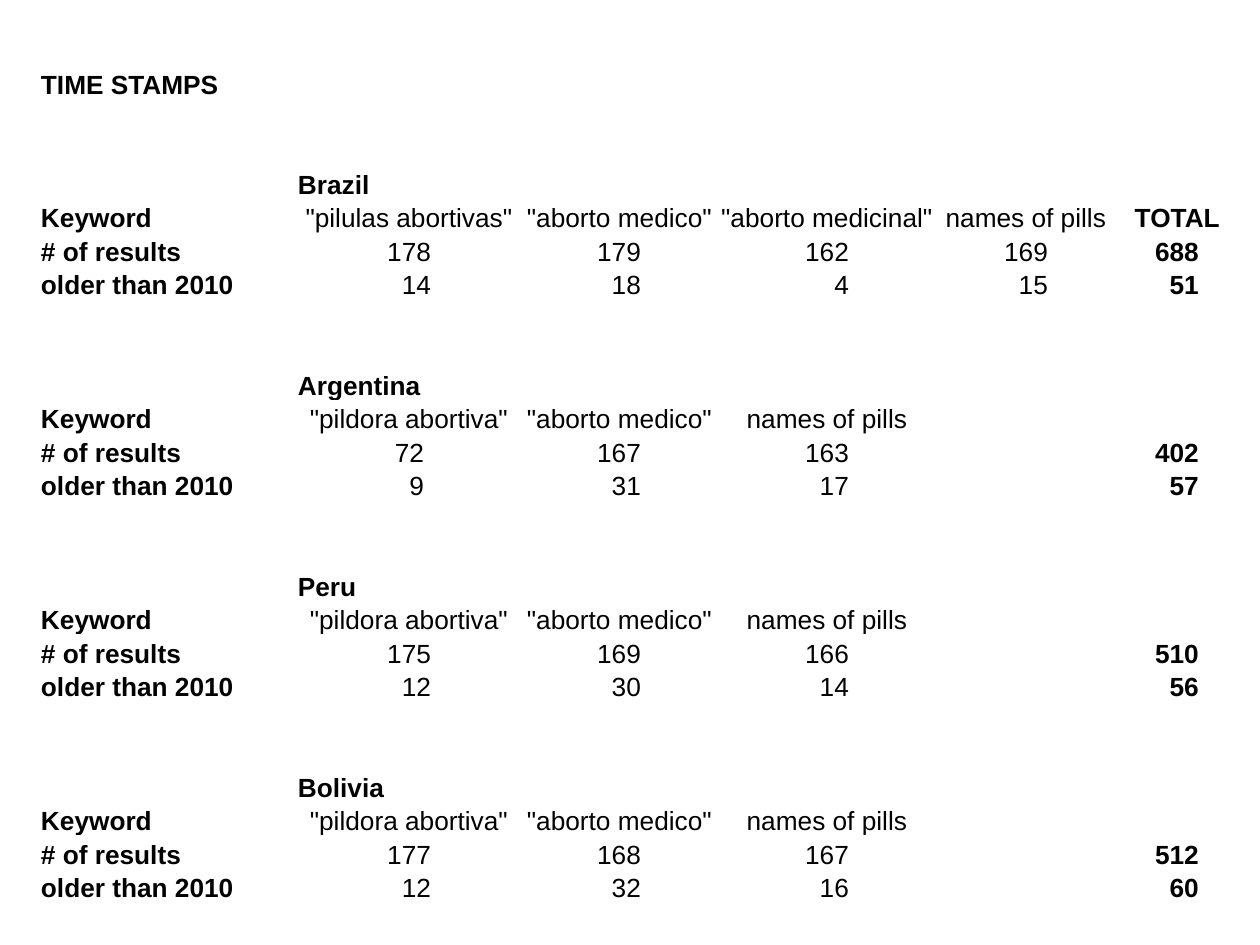
from pptx import Presentation
from pptx.dml.color import RGBColor
from pptx.enum.text import MSO_ANCHOR, PP_ALIGN
from pptx.util import Emu, Pt

PX = 914400 // 126
COLORS = {"text": "000000"}
COLUMN_WIDTHS = [257, 226, 195, 220, 178, 125]
ROW_COUNT = 25
FIRST_BLOCK_ROW = 3
BLOCK_STEP = 6
CELL_INSET = 2
DIGIT_WIDTH = 14.6
LABELS = ["Keyword", "# of results", "older than 2010"]

# Country, then keyword, results and older results for each column
COUNTRIES = [
    ("Brazil",
     ['"pilulas abortivas"', '"aborto medico"', '"aborto medicinal"', "names of pills", "TOTAL"],
     ["178", "179", "162", "169", "688"],
     ["14", "18", "4", "15", "51"]),
    ("Argentina",
     ['"pildora abortiva"', '"aborto medico"', "names of pills", "", ""],
     ["72", "167", "163", "", "402"],
     ["9", "31", "17", "", "57"]),
    ("Peru",
     ['"pildora abortiva"', '"aborto medico"', "names of pills", "", ""],
     ["175", "169", "166", "", "510"],
     ["12", "30", "14", "", "56"]),
    ("Bolivia",
     ['"pildora abortiva"', '"aborto medico"', "names of pills", "", ""],
     ["177", "168", "167", "", "512"],
     ["12", "32", "16", "", "60"]),
]


def px(length):
    return Emu(length * PX)


def format_cell(cell):
    """Give a cell, filled or empty, the plain look of the whole table."""
    cell.fill.background()
    cell.vertical_anchor = MSO_ANCHOR.BOTTOM
    cell.margin_left = cell.margin_right = cell.margin_top = px(CELL_INSET)
    cell.margin_bottom = 0
    font = cell.text_frame.paragraphs[0].font
    font.name = "Arial"
    font.size = Pt(15)
    font.color.rgb = RGBColor.from_string(COLORS["text"])


def write(cell, text, bold=True, align=PP_ALIGN.LEFT):
    para = cell.text_frame.paragraphs[0]
    para.add_run().text = text
    para.font.bold = bold
    para.alignment = align


def write_number(cell, text, bold, column_width, digits):
    """Right-align a number so that a column of this many digits looks centred."""
    write(cell, text, bold, PP_ALIGN.RIGHT)
    cell.margin_right = px(round((column_width - digits * DIGIT_WIDTH) / 2))


def fill_country(table, top_row, country, keywords, results, older):
    write(table.cell(top_row, 1), country)
    for offset, label in enumerate(LABELS, start=1):
        write(table.cell(top_row + offset, 0), label)
    total_column = len(COLUMN_WIDTHS) - 1
    for column, (keyword, *numbers) in enumerate(zip(keywords, results, older), start=1):
        bold = column == total_column
        if keyword:
            write(table.cell(top_row + 1, column), keyword, bold, PP_ALIGN.CENTER)
        for offset, number in enumerate(numbers, start=2):
            if number:
                write_number(table.cell(top_row + offset, column), number, bold,
                             COLUMN_WIDTHS[column], len(numbers[0]))


def add_time_stamps(page, left, top, height):
    frame = page.shapes.add_table(ROW_COUNT, len(COLUMN_WIDTHS), px(left), px(top),
                                  px(sum(COLUMN_WIDTHS)), px(height))
    table = frame.table
    table.first_row = False
    table.horz_banding = False
    for column, width in zip(table.columns, COLUMN_WIDTHS):
        column.width = px(width)
    for cell in table.iter_cells():
        format_cell(cell)
    write(table.cell(0, 0), "TIME STAMPS")
    for index, block in enumerate(COUNTRIES):
        fill_country(table, FIRST_BLOCK_ROW + index * BLOCK_STEP, *block)


def main():
    deck = Presentation()
    deck.slide_width = px(1260)
    deck.slide_height = px(945)
    page = deck.slides.add_slide(deck.slide_layouts[6])
    add_time_stamps(page, left=39, top=66, height=838)
    deck.save("out.pptx")


if __name__ == "__main__":
    main()
